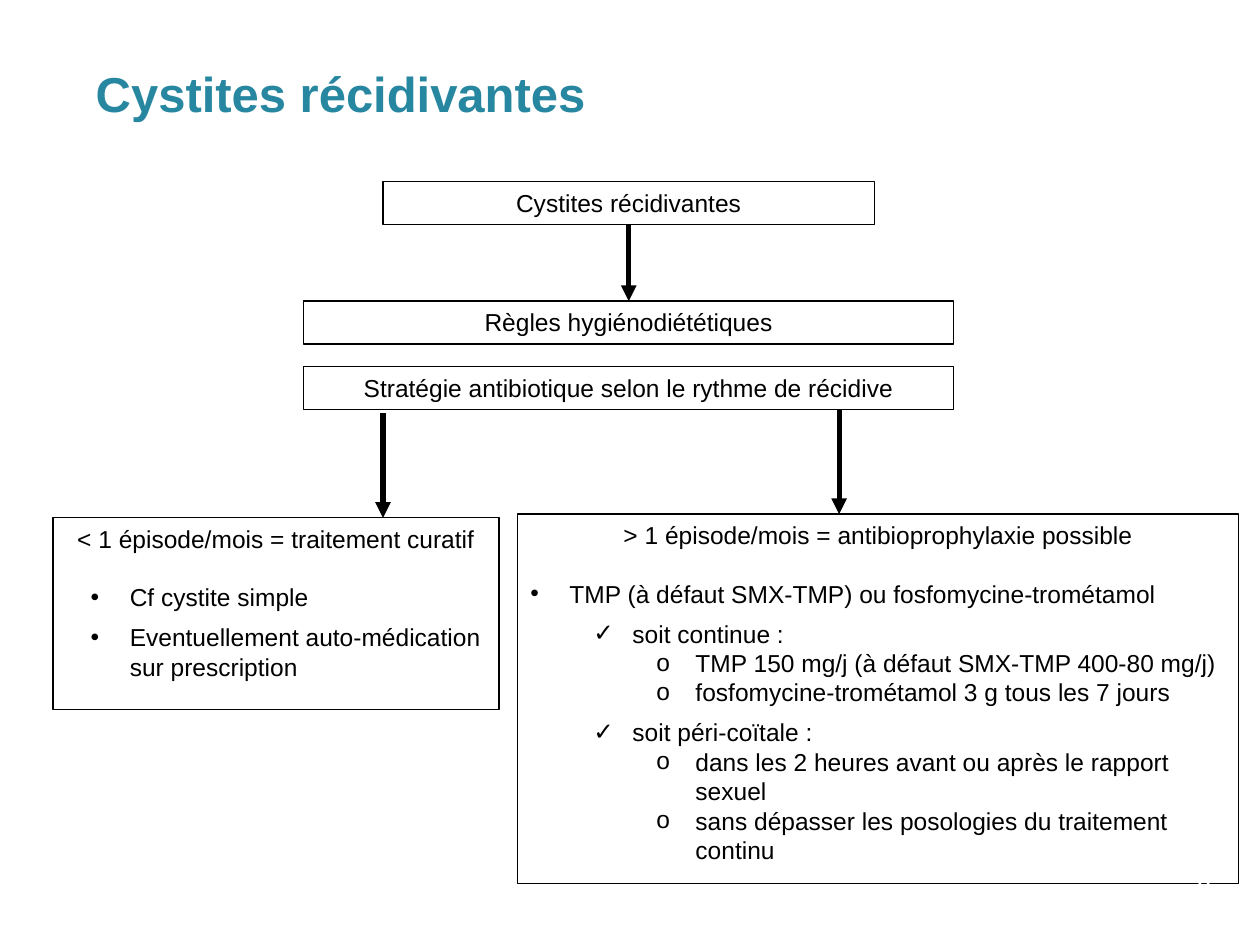
from dataclasses import dataclass

from lxml.etree import SubElement
from pptx import Presentation
from pptx.dml.color import RGBColor
from pptx.enum.shapes import MSO_CONNECTOR, MSO_SHAPE
from pptx.enum.text import MSO_ANCHOR, MSO_AUTO_SIZE, PP_ALIGN
from pptx.oxml.ns import qn
from pptx.util import Inches, Pt


@dataclass(frozen=True)
class Theme:
    font: str = "Arial"
    number_font: str = "Roboto"
    ink: RGBColor = RGBColor(0, 0, 0)
    paper: RGBColor = RGBColor(255, 255, 255)
    accent: RGBColor = RGBColor(0x27, 0x87, 0xA0)
    title_size: int = 28
    text_size: int = 14
    number_size: int = 16
    border: float = 0.75
    arrow: float = 3


THEME = Theme()
TEXT = {"name": THEME.font, "size": Pt(THEME.text_size), "bold": False}
TITLE = {"name": THEME.font, "size": Pt(THEME.title_size), "bold": True}
NUMBER = {"name": THEME.number_font, "size": Pt(THEME.number_size)}
FRAME = {"word_wrap": True, "auto_size": MSO_AUTO_SIZE.NONE}
HANGING = 0.31

# Lists: (level, bullet, left margin, space after, text)
CURATIVE = [
    (1, "•", 0.51, 6, "Cf cystite simple"),
    (1, "•", 0.51, 0, "Eventuellement auto-médication sur prescription"),
]
PROPHYLAXIS = [
    (0, "•", 0.31, 6, "TMP (à défaut SMX-TMP) ou fosfomycine-trométamol"),
    (1, "✓", 0.81, 0, "soit continue :"),
    (2, "o", 1.31, 0, "TMP 150 mg/j (à défaut SMX-TMP 400-80 mg/j)"),
    (2, "o", 1.31, 6, "fosfomycine-trométamol 3 g tous les 7 jours"),
    (1, "✓", 0.81, 0, "soit péri-coïtale :"),
    (2, "o", 1.31, 0, "dans les 2 heures avant ou après le rapport sexuel"),
    (2, "o", 1.31, 0, "sans dépasser les posologies du traitement continu"),
]


def apply(target, values):
    for name, value in values.items():
        setattr(target, name, value)


def place(shape, *box):
    apply(shape, dict(zip(("left", "top", "width", "height"), map(Inches, box))))


def write(paragraph, text, font, color, **layout):
    run = paragraph.add_run()
    run.text = text
    apply(run.font, font)
    run.font.color.rgb = color
    apply(paragraph, layout)


def set_bullet(paragraph, bullet, margin):
    properties = paragraph._p.get_or_add_pPr()
    hanging = HANGING if bullet else 0
    properties.set("marL", str(Inches(margin)))
    properties.set("indent", str(-Inches(hanging)))
    if bullet:
        SubElement(properties, qn("a:buFont"), typeface=THEME.font)
        SubElement(properties, qn("a:buChar"), char=bullet)
    else:
        SubElement(properties, qn("a:buNone"))


def outline(shape):
    shape.fill.solid()
    shape.fill.fore_color.rgb = THEME.paper
    shape.line.color.rgb = THEME.ink
    shape.line.width = Pt(THEME.border)


def add_step(slide, text, *box):
    step = slide.shapes.add_shape(MSO_SHAPE.RECTANGLE, *map(Inches, box))
    step.shadow.inherit = False
    outline(step)
    apply(step.text_frame, {**FRAME, "vertical_anchor": MSO_ANCHOR.TOP})
    write(step.text_frame.paragraphs[0], text, TEXT, THEME.ink,
          alignment=PP_ALIGN.CENTER)
    return step


def fill_panel(panel, heading, items, *box):
    place(panel, *box)
    outline(panel)
    frame = panel.text_frame
    apply(frame, {**FRAME, "vertical_anchor": MSO_ANCHOR.TOP})
    first = frame.paragraphs[0]
    set_bullet(first, None, 0)
    write(first, heading, TEXT, THEME.ink, alignment=PP_ALIGN.CENTER,
          space_before=Pt(0), space_after=Pt(16.5))
    for level, bullet, margin, after, text in items:
        paragraph = frame.add_paragraph()
        set_bullet(paragraph, bullet, margin)
        write(paragraph, text, TEXT, THEME.ink, level=level,
              alignment=PP_ALIGN.LEFT, space_before=Pt(0), space_after=Pt(after))


def add_arrow(slide, x, top, bottom):
    arrow = slide.shapes.add_connector(
        MSO_CONNECTOR.STRAIGHT, *map(Inches, (x, top, x, bottom)))
    arrow.line.color.rgb = THEME.ink
    arrow.line.width = Pt(THEME.arrow)
    SubElement(arrow.line._get_or_add_ln(), qn("a:tailEnd"), type="triangle")
    SubElement(arrow._element.spPr, qn("a:effectLst"))
    return arrow


def add_page_number(slide, number):
    box = slide.shapes.add_textbox(*map(Inches, (8.64, 6.86, 1.08, 0.4)))
    apply(box.text_frame, {**FRAME, "vertical_anchor": MSO_ANCHOR.MIDDLE})
    write(box.text_frame.paragraphs[0], number, NUMBER, THEME.paper,
          alignment=PP_ALIGN.RIGHT)


def main():
    deck = Presentation()
    apply(deck, {"slide_width": Inches(10), "slide_height": Inches(7.5)})
    slide = deck.slides.add_slide(deck.slide_layouts.get_by_name("Two Content"))
    title, curative, prophylaxis = slide.placeholders

    # Title
    place(title, 0.66, 0.3, 9.34, 1.16)
    apply(title.text_frame, {**FRAME, "vertical_anchor": MSO_ANCHOR.TOP,
                             "margin_top": Inches(0.2)})
    write(title.text_frame.paragraphs[0], "Cystites récidivantes", TITLE,
          THEME.accent, alignment=PP_ALIGN.LEFT)

    # Steps common to all patients
    diagnosis = add_step(slide, "Cystites récidivantes", 3.04, 1.44, 3.9, 0.34)
    hygiene = add_step(slide, "Règles hygiénodiététiques", 2.41, 2.39, 5.16, 0.34)
    add_step(slide, "Stratégie antibiotique selon le rythme de récidive",
             2.41, 2.91, 5.16, 0.34)

    # Treatment according to frequency
    fill_panel(curative, "< 1 épisode/mois = traitement curatif", CURATIVE,
               0.42, 4.11, 3.54, 1.52)
    fill_panel(prophylaxis, "> 1 épisode/mois = antibioprophylaxie possible",
               PROPHYLAXIS, 4.11, 4.08, 5.72, 2.93)

    # Arrows
    to_hygiene = add_arrow(slide, 4.99, 1.78, 2.39)
    to_hygiene.begin_connect(diagnosis, 2)
    to_hygiene.end_connect(hygiene, 0)
    add_arrow(slide, 3.04, 3.28, 4.11)
    add_arrow(slide, 6.66, 3.25, 4.08)

    add_page_number(slide, "9")
    deck.save("out.pptx")


if __name__ == "__main__":
    main()
